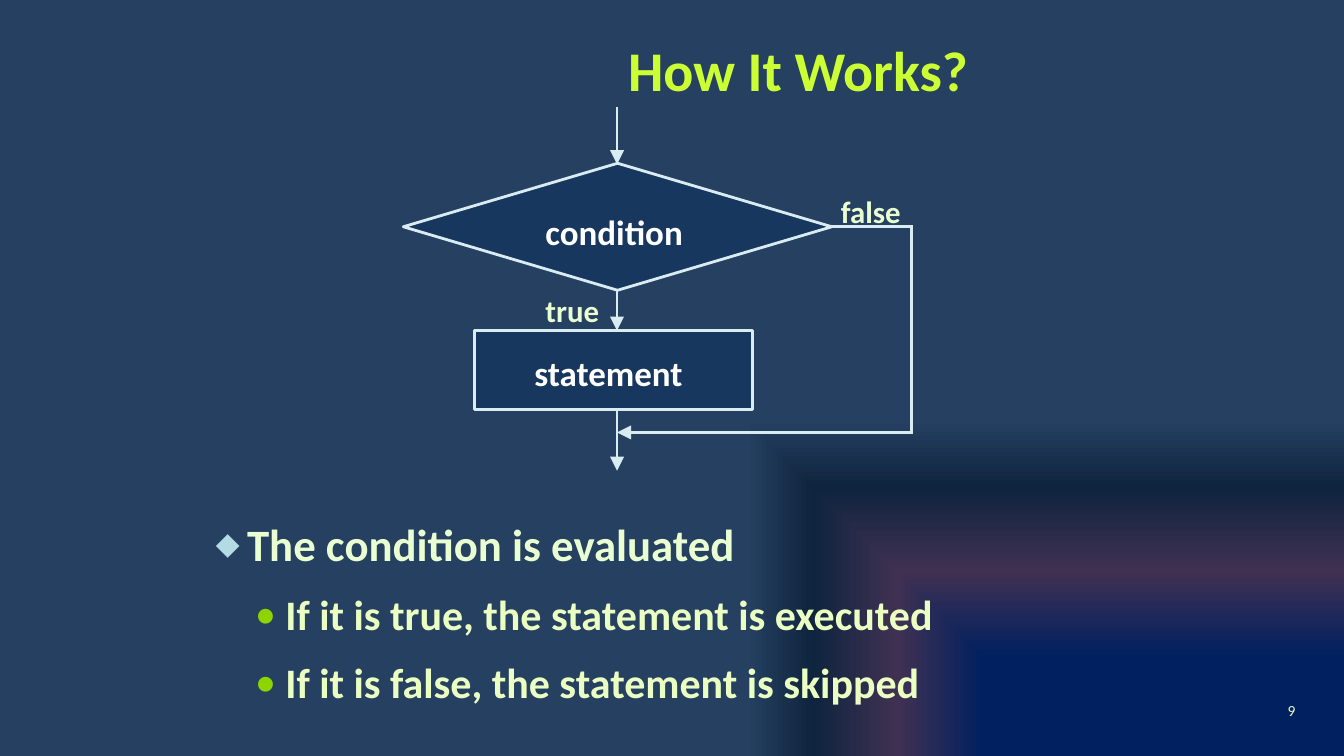
import lxml.etree
import pptx
import pptx.dml.color
import pptx.enum.shapes
import pptx.enum.text
import pptx.oxml
import pptx.oxml.ns
import pptx.util

Inches = pptx.util.Inches
Pt = pptx.util.Pt
qn = pptx.oxml.ns.qn
SHAPES = pptx.enum.shapes.MSO_SHAPE


def color(value):
    return pptx.dml.color.RGBColor.from_string(value)


class FlowSlide:
    """Holds the style and the current slide, and draws each kind of element."""

    font = "Calibri"
    edge = "D9ECF1"
    box_fill = "17375E"
    label = "EAFFD1"
    pale = "EAFFC1"
    white = "FFFFFF"
    title = "CCFF33"
    edge_width = 2

    def __init__(self, slide):
        self.slide = slide

    def background(self, stops):
        self.slide.background.fill.solid()
        properties = self.slide.element.xpath(".//p:bgPr")[0]
        stop_xml = "".join(
            f'<a:gs pos="{position * 1000}"><a:srgbClr val="{shade}"/></a:gs>'
            for position, shade in stops
        )
        gradient = pptx.oxml.parse_xml(
            f'<a:gradFill {pptx.oxml.ns.nsdecls("a")} rotWithShape="1">'
            f"<a:gsLst>{stop_xml}</a:gsLst>"
            '<a:path path="rect"><a:fillToRect l="100000" t="100000"/></a:path>'
            "</a:gradFill>"
        )
        properties.replace(properties[0], gradient)

    def node(self, preset, left, top, width, height):
        node = self.slide.shapes.add_shape(
            preset, Inches(left), Inches(top), Inches(width), Inches(height)
        )
        node.shadow.inherit = False
        node.fill.solid()
        node.fill.fore_color.rgb = color(self.box_fill)
        node.line.color.rgb = color(self.edge)
        node.line.width = Pt(self.edge_width)

    def flow(self, start, end, arrow=True):
        flow = self.slide.shapes.add_connector(
            pptx.enum.shapes.MSO_CONNECTOR.STRAIGHT,
            *(Inches(value) for value in (*start, *end)),
        )
        flow.line.color.rgb = color(self.edge)
        flow.line.width = Pt(self.edge_width)
        line = flow.line._get_or_add_ln()
        line.set("cap", "sq")
        if arrow:
            lxml.etree.SubElement(
                line, qn("a:tailEnd"), type="triangle", w="lg", len="lg"
            )
        lxml.etree.SubElement(flow._element.spPr, qn("a:effectLst"))

    def text(self, left, top, width, height):
        frame = self.slide.shapes.add_textbox(
            Inches(left), Inches(top), Inches(width), Inches(height)
        ).text_frame
        frame.word_wrap = True
        frame.vertical_anchor = pptx.enum.text.MSO_ANCHOR.TOP
        frame.margin_left = frame.margin_right = 0
        frame.margin_top = frame.margin_bottom = 0
        return frame

    def paragraph(self, frame, words, size, shade, bold=True, margin=0.01,
                  hanging=0, before=0, bullet=None):
        first = not frame.paragraphs[0].runs
        paragraph = frame.paragraphs[0] if first else frame.add_paragraph()
        if before:
            paragraph.space_before = Pt(before)
        properties = paragraph._p.get_or_add_pPr()
        properties.set("marL", str(Inches(margin)))
        properties.set("indent", str(-Inches(hanging)))
        if bullet:
            symbol, bullet_shade, percent = bullet
            bullet_color = lxml.etree.SubElement(properties, qn("a:buClr"))
            lxml.etree.SubElement(bullet_color, qn("a:srgbClr"), val=bullet_shade)
            lxml.etree.SubElement(properties, qn("a:buSzPct"), val=str(percent * 1000))
            lxml.etree.SubElement(properties, qn("a:buFont"), typeface=self.font)
            lxml.etree.SubElement(properties, qn("a:buChar"), char=symbol)
        run = paragraph.add_run()
        run.text = words
        run.font.name = self.font
        run.font.size = Pt(size)
        run.font.bold = bold
        run.font.color.rgb = color(shade)


def main():
    deck = pptx.Presentation()
    deck.slide_width = Inches(13.33)
    deck.slide_height = Inches(7.5)
    page = FlowSlide(deck.slides.add_slide(deck.slide_layouts[6]))
    page.background([(26, "002060"), (49, "403152"), (71, "0F243E"), (89, "254061")])

    heading = page.text(0.22, 0.35, 12.89, 0.67)
    page.paragraph(heading, "How It Works?", 40, page.title, margin=6.01)

    explanation = page.text(2.13, 5.13, 7.41, 1.91)
    page.paragraph(explanation, "The condition is evaluated", 32, page.label,
                   margin=0.32, hanging=0.31, bullet=("◆", "B4DAE4", 69))
    for outcome in ("If it is true, the statement is executed",
                    "If it is false, the statement is skipped"):
        page.paragraph(explanation, outcome, 30, page.pale, margin=0.7,
                       hanging=0.3, before=12.7, bullet=("•", "8ED500", 100))

    page.node(SHAPES.DIAMOND, 4, 1.62, 4.25, 1.26)
    page.node(SHAPES.RECTANGLE, 4.71, 3.28, 2.75, 0.78)

    axis, bypass, branch, merge = 6.12, 9.04, 2.25, 4.29
    for start, end in ((1.08, 1.63), (2.88, 3.28), (4.06, 4.67)):
        page.flow((axis, start), (axis, end))
    page.flow((8.25, branch), (bypass, branch), arrow=False)
    page.flow((bypass, branch), (bypass, merge), arrow=False)
    page.flow((bypass, merge), (axis, merge))

    true_branch = page.text(5.29, 2.89, 1.59, 1.03)
    page.paragraph(true_branch, "true", 22, page.label, margin=0.12)
    page.paragraph(true_branch, "statement", 25, page.white, before=16.9)
    condition = page.text(5.4, 2.09, 1.45, 0.42)
    page.paragraph(condition, "condition", 25, page.white)
    false_branch = page.text(8.33, 1.91, 0.65, 0.37)
    page.paragraph(false_branch, "false", 22, page.label)
    page_number = page.text(12.67, 6.96, 0.28, 0.19)
    page.paragraph(page_number, "9", 11, page.pale, bold=False, margin=0.1)

    deck.save("out.pptx")


if __name__ == "__main__":
    main()
